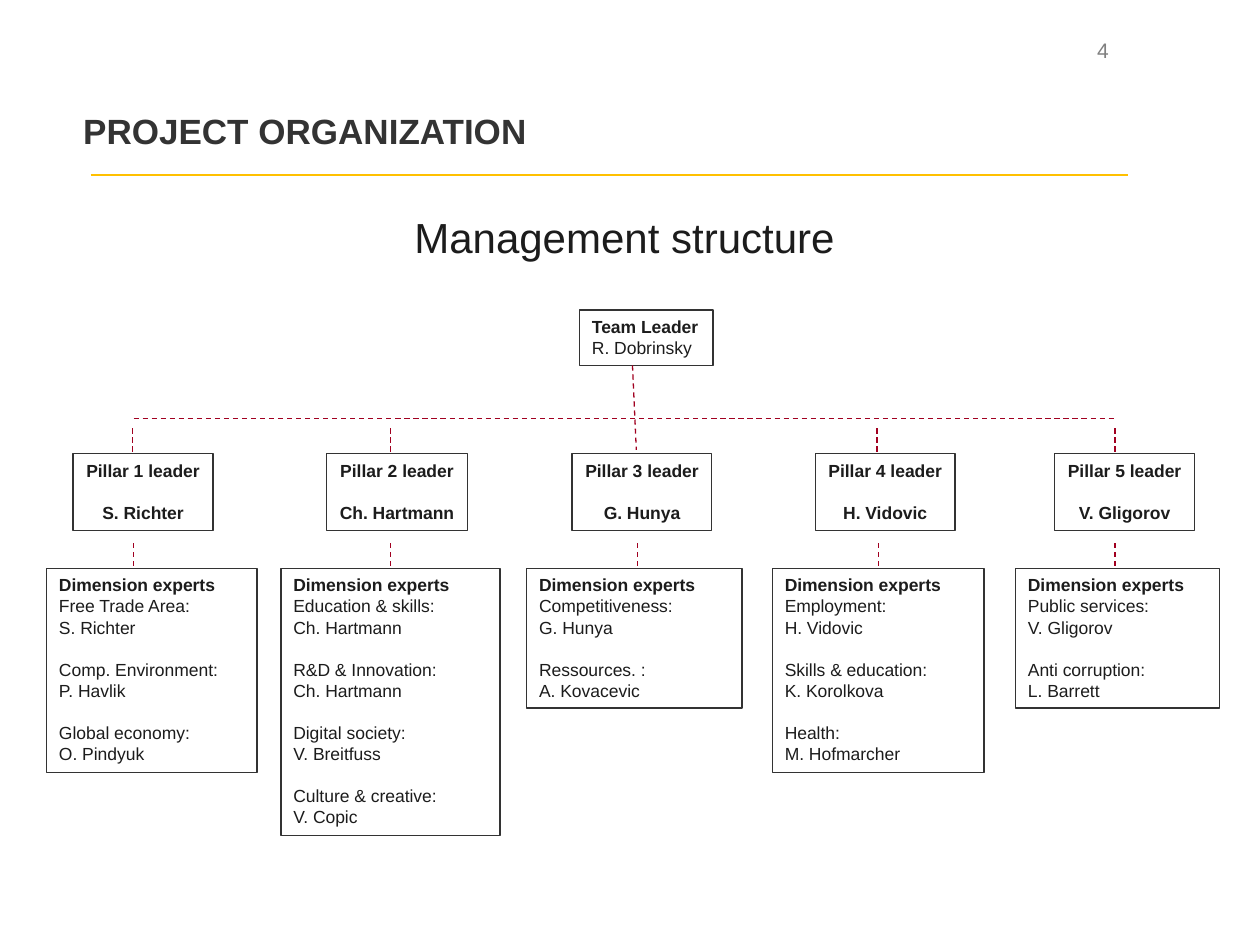
"""Build the project organization slide with its management chart."""
import pptx
import pptx.dml.color
import pptx.enum.dml
import pptx.enum.shapes
import pptx.enum.text
import pptx.util
from lxml import etree
from pptx.util import Inches

ALIGN = pptx.enum.text.PP_ALIGN
ANCHOR = pptx.enum.text.MSO_ANCHOR
INK = "1C1C1C"
LINE_GAP = 12


def color(hex_string):
    return pptx.dml.color.RGBColor.from_string(hex_string)


def write(box, lines, size=10, ink=INK, align=ALIGN.LEFT, wrap=True, anchor=ANCHOR.TOP):
    """Write (text, bold, space before) lines into a shape."""
    frame = box.text_frame
    settings = {"word_wrap": wrap, "vertical_anchor": anchor,
                "auto_size": pptx.enum.text.MSO_AUTO_SIZE.NONE}
    for name, value in settings.items():
        setattr(frame, name, value)
    for index, (text, bold, gap) in enumerate(lines):
        para = frame.paragraphs[0] if index == 0 else frame.add_paragraph()
        para.alignment = align
        para.space_before = pptx.util.Pt(gap)
        span = para.add_run()
        span.text = text
        values = {"name": "Arial", "size": pptx.util.Pt(size), "bold": bold}
        for name, value in values.items():
            setattr(span.font, name, value)
        span.font.color.rgb = color(ink)


deck = pptx.Presentation()
deck.slide_width, deck.slide_height = Inches(10), Inches(7.5)
page = deck.slides.add_slide(deck.slide_layouts[5])

title = page.shapes.title
title_place = {"left": 0.56, "top": 0.77, "width": 8.8, "height": 0.47}
for name, value in title_place.items():
    setattr(title, name, Inches(value))
write(title, [("PROJECT ORGANIZATION", True, 0)], 20, "333333", anchor=ANCHOR.MIDDLE)
title.text_frame.paragraphs[0].line_spacing = 1.2

captions = [
    ("4", (8.61, 0.25, 0.95, 0.3), 12, "808080"),
    ("Management structure", (3.19, 1.63, 3.66, 0.5), 24, INK),
]
for text, place, size, ink in captions:
    box = page.shapes.add_textbox(*map(Inches, place))
    write(box, [(text, False, 0)], size, ink)

pillars = [
    ("S. Richter", 0.58, 1.11, 0.37, 1.67, 1.62,
     [("Free Trade Area:", "S. Richter"), ("Comp. Environment:", "P. Havlik"),
      ("Global economy:", "O. Pindyuk")]),
    ("Ch. Hartmann", 2.59, 1.12, 2.23, 1.74, 2.12,
     [("Education & skills:", "Ch. Hartmann"), ("R&D & Innovation:", "Ch. Hartmann"),
      ("Digital society:", "V. Breitfuss"), ("Culture & creative:", "V. Copic")]),
    ("G. Hunya", 4.54, 1.11, 4.18, 1.71, 1.11,
     [("Competitiveness:", "G. Hunya"), ("Ressources. :", "A. Kovacevic")]),
    ("H. Vidovic", 6.47, 1.11, 6.13, 1.68, 1.62,
     [("Employment:", "H. Vidovic"), ("Skills & education:", "K. Korolkova"),
      ("Health:", "M. Hofmarcher")]),
    ("V. Gligorov", 8.37, 1.11, 8.06, 1.62, 1.11,
     [("Public services:", "V. Gligorov"), ("Anti corruption:", "L. Barrett")]),
]
team_lines = [("Team Leader", True, 0), ("R. Dobrinsky", False, 0)]
boxes = [((4.6, 2.46, 1.06, 0.44), team_lines, ALIGN.LEFT, False)]
for number, (leader, left, width, expert_left, expert_width, height, fields) in enumerate(pillars, 1):
    leader_lines = [(f"Pillar {number} leader", True, 0), (leader, True, LINE_GAP)]
    boxes.append(((left, 3.6, width, 0.61), leader_lines, ALIGN.CENTER, False))
    expert_lines = [("Dimension experts", True, 0)]
    for index, (field, expert) in enumerate(fields):
        expert_lines += [(field, False, LINE_GAP if index else 0), (expert, False, 0)]
    boxes.append(((expert_left, 4.51, expert_width, height), expert_lines, ALIGN.LEFT, True))

for place, lines, align, wrap in boxes:
    box = page.shapes.add_shape(pptx.enum.shapes.MSO_SHAPE.RECTANGLE, *map(Inches, place))
    box.shadow.inherit = False
    box.fill.background()
    box.line.color.rgb = color("333333")
    box.line.width = pptx.util.Pt(0.75)
    write(box, lines, align=align, wrap=wrap)

links = [(1.06, 3.32, 8.85, 3.32), (5.02, 2.9, 5.05, 3.57)]
links += [(x, 3.4, x, 3.59) for x in (1.05, 3.1, 6.96, 8.85)]
links += [(x, 4.31, x, 4.5) for x in (1.06, 3.1, 5.06, 6.97, 8.85)]
strokes = [((0.72, 1.39, 8.95, 1.39), "FFC000", 1, None)]
strokes += [(ends, "A10020", 0.75, pptx.enum.dml.MSO_LINE.DASH) for ends in links]
for ends, ink, width, dash in strokes:
    link = page.shapes.add_connector(
        pptx.enum.shapes.MSO_CONNECTOR.STRAIGHT, *map(Inches, ends))
    link.line.color.rgb = color(ink)
    link.line.width = pptx.util.Pt(width)
    link.line.dash_style = dash
    etree.SubElement(link._element.spPr, pptx.oxml.ns.qn("a:effectLst"))

deck.save("out.pptx")
